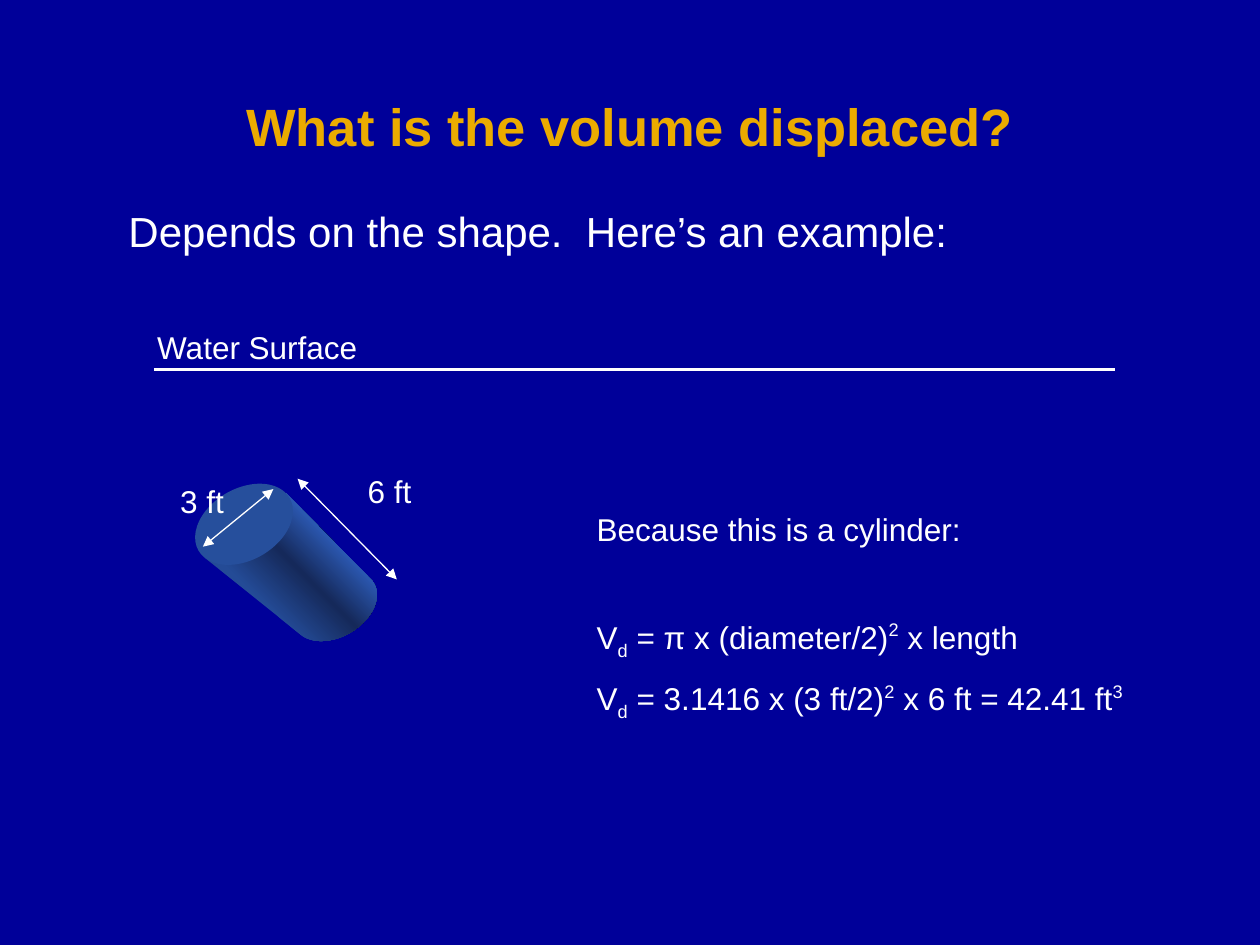
import copy
import math

from lxml import etree
from pptx import Presentation
from pptx.dml.color import RGBColor
from pptx.enum import shapes, text
from pptx.oxml.ns import qn
from pptx.util import Cm, Pt

NAVY = RGBColor(0x00, 0x00, 0x99)
GOLD = RGBColor(0xEB, 0xAB, 0x00)
WHITE = RGBColor(0xFF, 0xFF, 0xFF)
FACE = RGBColor(0x26, 0x4F, 0x9C)
SIDE_STOPS = [
    (0.3, RGBColor(0x24, 0x4B, 0x96)),
    (0.52, RGBColor(0x15, 0x29, 0x5A)),
    (0.72, RGBColor(0x2C, 0x5A, 0xB4)),
]
FONT = "Arial"
SUB, SUP = -25, 40


def add_run(p, words, size, color=WHITE, bold=False, shift=0):
    r = p.add_run()
    r.text = words
    r.font.name = FONT
    r.font.size = Pt(size)
    r.font.bold = bold
    r.font.color.rgb = color
    if shift:
        r._r.get_or_add_rPr().set("baseline", str(shift * 1000))


def add_box(slide, x, y, w, h):
    tf = slide.shapes.add_textbox(Cm(x), Cm(y), Cm(w), Cm(h)).text_frame
    tf.word_wrap = True
    return tf


def add_label(slide, x, y, w, words, size=18):
    tf = add_box(slide, x, y, w, size * 0.056)
    add_run(tf.paragraphs[0], words, size)


def add_line(slide, x1, y1, x2, y2, width, arrows=False):
    line = slide.shapes.add_connector(
        shapes.MSO_CONNECTOR.STRAIGHT, Cm(x1), Cm(y1), Cm(x2), Cm(y2))
    line.line.color.rgb = WHITE
    line.line.width = Pt(width)
    if arrows:
        ln = line.line._get_or_add_ln()
        for end in ("a:headEnd", "a:tailEnd"):
            etree.SubElement(ln, qn(end), type="triangle")
    etree.SubElement(line._element.spPr, qn("a:effectLst"))


def add_title(slide, x, y, w, h):
    tf = add_box(slide, x, y, w, h)
    tf.vertical_anchor = text.MSO_ANCHOR.MIDDLE
    p = tf.paragraphs[0]
    p.alignment = text.PP_ALIGN.CENTER
    add_run(p, "What is the volume displaced?", 30, GOLD, True)


def add_water_surface(slide, x, y, w):
    add_line(slide, x, y + 0.97, x + w, y + 0.97, 2)
    add_label(slide, x - 0.18, y, 6.86, "Water Surface")


def add_solid(slide, cx, cy, dx, dy, a, b, taper, tilt):
    cos, sin = math.cos(tilt), math.sin(tilt)
    u = (dx * cos + dy * sin) / a
    v = (dy * cos - dx * sin) / b
    axis = math.atan2(v, u)
    spread = math.acos((1 - taper) / math.hypot(u, v))

    def rim(x, y, scale, angle):
        p, q = scale * a * math.cos(angle), scale * b * math.sin(angle)
        return Cm(x + p * cos - q * sin), Cm(y + p * sin + q * cos)

    steps = 40
    outline = [rim(cx + dx, cy + dy, taper, axis + spread * (2 * i / steps - 1))
               for i in range(steps + 1)]
    outline += [rim(cx, cy, 1, axis + spread), rim(cx, cy, 1, axis - spread)]
    builder = slide.shapes.build_freeform(*outline[0])
    builder.add_line_segments(outline[1:], close=True)
    side = builder.convert_to_shape()
    side.shadow.inherit = False
    side.line.fill.background()
    side.fill.gradient()
    side.fill.gradient_angle = 45
    gs = side.fill._xPr.find(qn("a:gradFill")).find(qn("a:gsLst"))
    gs.append(copy.deepcopy(gs[-1]))
    for stop, (position, color) in zip(side.fill.gradient_stops, SIDE_STOPS):
        stop.position = position
        stop.color.rgb = color

    face = slide.shapes.add_shape(
        shapes.MSO_SHAPE.OVAL, Cm(cx - a), Cm(cy - b), Cm(2 * a), Cm(2 * b))
    face.rotation = math.degrees(tilt)
    face.shadow.inherit = False
    face.fill.solid()
    face.fill.fore_color.rgb = FACE
    face.line.fill.background()


def add_cylinder(slide, x, y):
    add_line(slide, x + 4.62, y + 2.28, x + 2.62, y + 0.25, 0.75, True)
    add_label(slide, x + 3.78, y, 3.05, "6 ft")
    add_solid(slide, x + 1.54, y + 1.17, 1.83, 1.65, 1.06, 0.72, 0.86,
              math.radians(-30))
    add_line(slide, x + 0.71, y + 1.62, x + 2.13, y + 0.46, 0.75, True)
    add_label(slide, x, y + 0.2, 3.05, "3 ft")


def add_formulas(slide, x, y, w, h):
    rows = [
        (0, [("Because this is a cylinder:", 0)]),
        (40, [("V", 0), ("d", SUB), (" = π x (diameter/2)", 0), ("2", SUP),
              (" x length", 0)]),
        (10.5, [("V", 0), ("d", SUB), (" = 3.1416 x (3 ft/2)", 0), ("2", SUP),
                (" x 6 ft = 42.41 ft", 0), ("3", SUP)]),
    ]
    tf = add_box(slide, x, y, w, h)
    for i, (gap, runs) in enumerate(rows):
        p = tf.add_paragraph() if i else tf.paragraphs[0]
        if gap:
            p.space_before = Pt(gap)
        for words, shift in runs:
            add_run(p, words, 18, shift=shift)


def main():
    prs = Presentation()
    prs.slide_width, prs.slide_height = Cm(25.4), Cm(19.05)
    slide = prs.slides.add_slide(prs.slide_layouts[6])
    slide.background.fill.solid()
    slide.background.fill.fore_color.rgb = NAVY
    add_title(slide, 1.9, 1.48, 21.6, 2.1)
    add_label(slide, 2.34, 4.02, 20.17, "Depends on the shape.  Here’s an example:", 24)
    add_water_surface(slide, 3.1, 6.48, 19.38)
    add_cylinder(slide, 3.38, 9.4)
    add_formulas(slide, 11.78, 10.16, 11.73, 4.47)
    prs.save("out.pptx")


if __name__ == "__main__":
    main()
